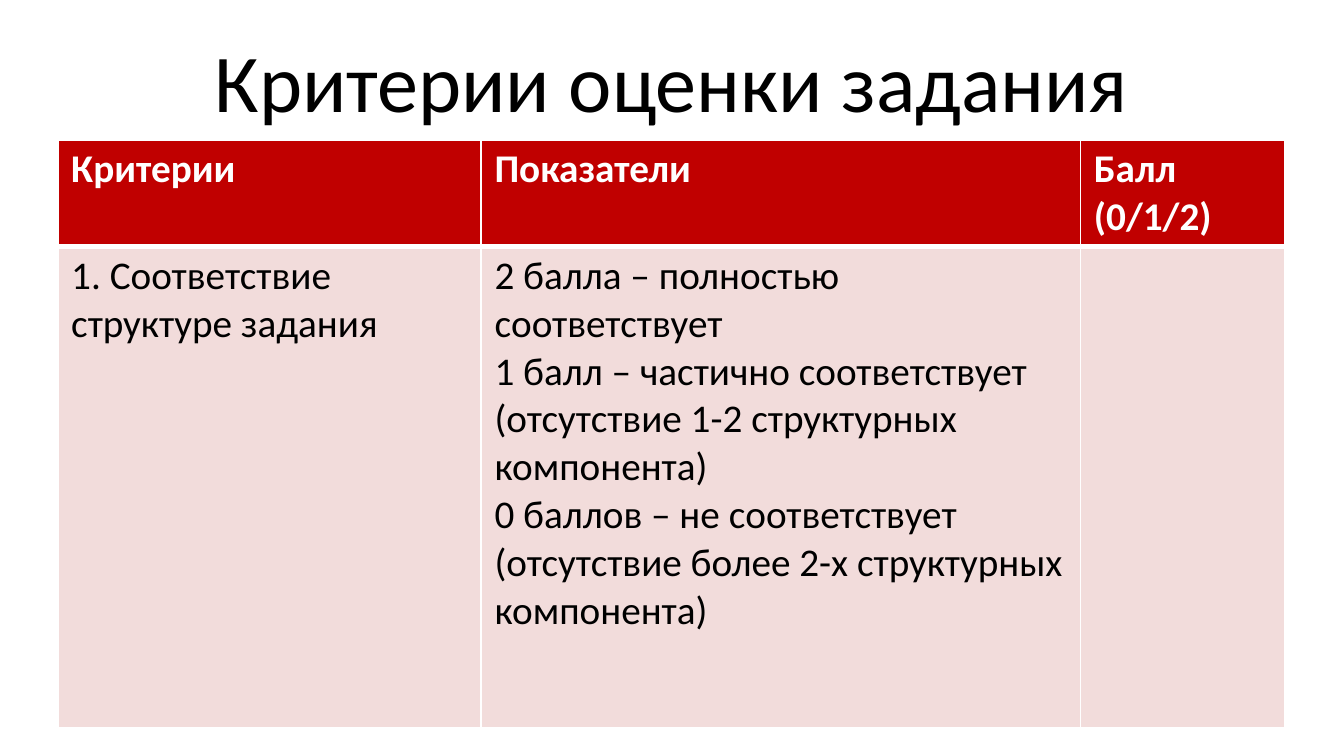
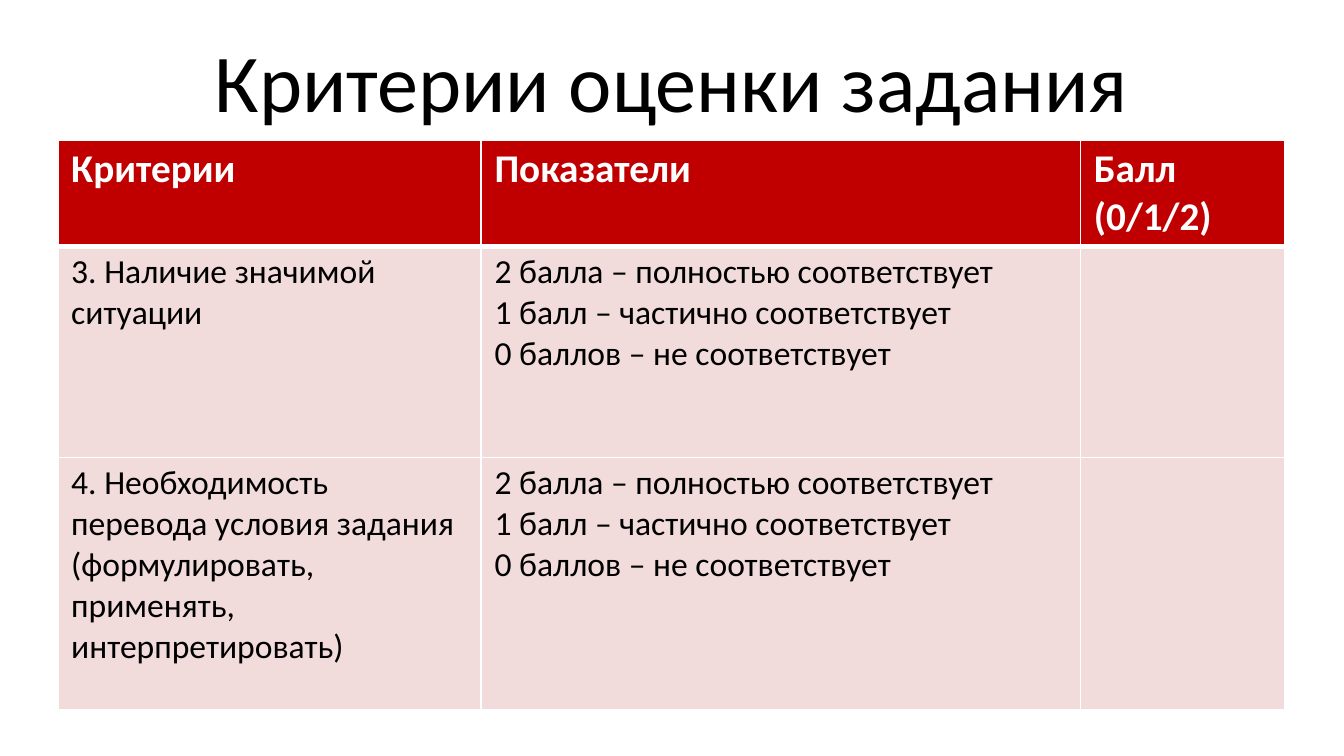
from lxml import etree
from pptx import Presentation
from pptx.dml.color import RGBColor
from pptx.enum.text import MSO_ANCHOR, PP_ALIGN
from pptx.oxml.ns import qn
from pptx.util import Inches, Pt

CENTER = PP_ALIGN.CENTER
LEFT = PP_ALIGN.LEFT
MIDDLE = MSO_ANCHOR.MIDDLE
TITLE_ONLY = 5

SLIDE_WIDTH = 10
SLIDE_HEIGHT = SLIDE_WIDTH * 9 / 16
FONT = "Calibri"
BLACK, WHITE, RED, PINK = "000000", "FFFFFF", "C00000", "F2DCDB"

TITLE = "Критерии оценки задания"
HEADER = ["Критерии", "Показатели", "Балл (0/1/2)"]
SCALE = [
    "2 балла – полностью соответствует",
    "1 балл – частично соответствует",
    "0 баллов – не соответствует",
]
DETAILS = ["", " (отсутствие 1-2 структурных компонента)",
           " (отсутствие более 2-х структурных компонента)"]
DETAILED_SCALE = [score + detail for score, detail in zip(SCALE, DETAILS)]

SLIDES = [
    {"size": 21, "rows": [
        (3.58, "1. Соответствие структуре задания", DETAILED_SCALE),
    ]},
    {"size": 18, "rows": [
        (1.57, "3. Наличие значимой ситуации", SCALE),
        (1.88, "4. Необходимость перевода условия задания "
               "(формулировать, применять, интерпретировать)", SCALE),
    ]},
]

TABLE_LEFT, TABLE_TOP = 0.43, 1.04
COLUMN_WIDTHS = [3.15, 4.46, 1.52]
CELL_MARGIN = 0.04
HEADER_HEIGHT = 0.78
HEADER_SIZE = 21
THIN, THICK = 1, 3


def color(value):
    return RGBColor.from_string(value)


def write(frame, lines, size, ink=BLACK, bold=False, align=LEFT):
    for index, line in enumerate(lines):
        para = frame.add_paragraph() if index else frame.paragraphs[0]
        para.alignment = align
        span = para.add_run()
        span.text = line
        span.font.name = FONT
        span.font.size = Pt(size)
        span.font.bold = bold
        span.font.color.rgb = color(ink)


def set_borders(cell, top, bottom):
    properties = cell._tc.get_or_add_tcPr()
    widths = {"a:lnL": THIN, "a:lnR": THIN, "a:lnT": top, "a:lnB": bottom}
    for position, (tag, width) in enumerate(widths.items()):
        line = etree.Element(qn(tag), w=str(Pt(width)))
        fill = etree.SubElement(line, qn("a:solidFill"))
        etree.SubElement(fill, qn("a:srgbClr"), val=WHITE)
        properties.insert(position, line)


def add_title(slide):
    title = slide.shapes.title
    title.left, title.top = Inches(0.75), Inches(0.15)
    title.width, title.height = Inches(8.5), Inches(0.89)
    title.text_frame.vertical_anchor = MIDDLE
    title.text_frame.word_wrap = True
    write(title.text_frame, [TITLE], 44, align=CENTER)


def add_criteria_table(slide, rows, size):
    heights = [HEADER_HEIGHT] + [height for height, _, _ in rows]
    contents = [[[label] for label in HEADER]]
    contents += [[[criterion], scale, []] for _, criterion, scale in rows]
    table = slide.shapes.add_table(
        len(heights), len(COLUMN_WIDTHS), Inches(TABLE_LEFT), Inches(TABLE_TOP),
        Inches(sum(COLUMN_WIDTHS)), Inches(sum(heights))).table
    for column, width in zip(table.columns, COLUMN_WIDTHS):
        column.width = Inches(width)
    for row_index, (height, row) in enumerate(zip(heights, contents)):
        table.rows[row_index].height = Inches(height)
        is_header = row_index == 0
        for column_index, lines in enumerate(row):
            cell = table.cell(row_index, column_index)
            cell.margin_top = cell.margin_bottom = Inches(CELL_MARGIN)
            cell.fill.solid()
            cell.fill.fore_color.rgb = color(RED if is_header else PINK)
            set_borders(cell, THICK if row_index == 1 else THIN,
                        THICK if is_header else THIN)
            write(cell.text_frame, lines, HEADER_SIZE if is_header else size,
                  ink=WHITE if is_header else BLACK, bold=is_header)


def main():
    deck = Presentation()
    deck.slide_width = Inches(SLIDE_WIDTH)
    deck.slide_height = Inches(SLIDE_HEIGHT)
    for content in SLIDES:
        slide = deck.slides.add_slide(deck.slide_layouts[TITLE_ONLY])
        add_title(slide)
        add_criteria_table(slide, content["rows"], content["size"])
    deck.save("out.pptx")


if __name__ == "__main__":
    main()
